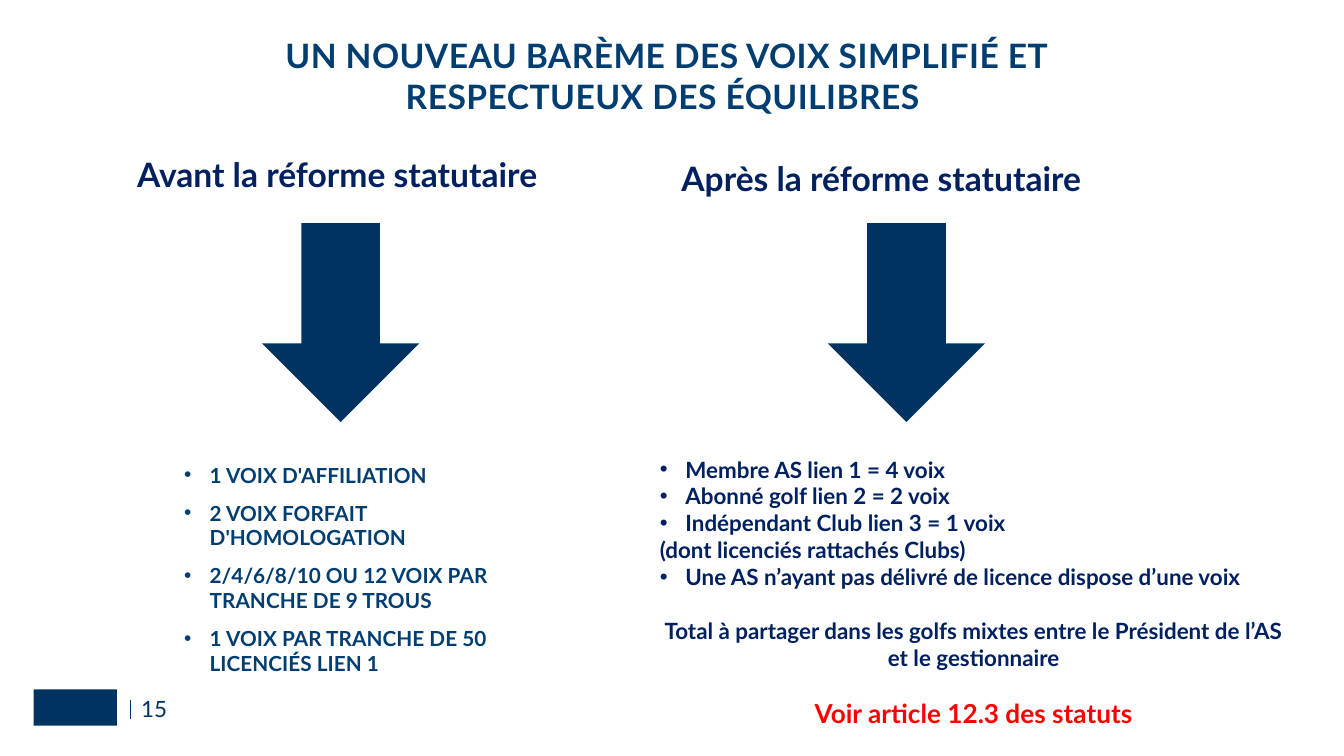
from lxml import etree
from pptx import Presentation
from pptx.dml.color import RGBColor
from pptx.enum import shapes, text
from pptx.oxml import ns
from pptx import util as u

WIDTH = 10
HEIGHT = WIDTH * 9 / 16
COLUMN, ROW = WIDTH / 100, HEIGHT / 100  # grid of 100 columns by 100 rows
COLORS = {"title": "003D70", "navy": "003361", "rule": "033363",
          "ink": "002060", "alert": "FF0000"}
FONT = "Lato"
HANG = u.Inches(0.19)
COMPARISON_LAYOUT = 4
LEFT, CENTER = text.PP_ALIGN.LEFT, text.PP_ALIGN.CENTER

BEFORE = ["1 VOIX D'AFFILIATION", "2 VOIX FORFAIT D'HOMOLOGATION",
          "2/4/6/8/10 OU 12 VOIX PAR TRANCHE DE 9 TROUS",
          "1 VOIX PAR TRANCHE DE 50 LICENCIÉS LIEN 1"]
AFTER = [
    ("Membre AS lien 1 = 4 voix", {"bullet": True}),
    ("Abonné golf lien 2 = 2 voix", {"bullet": True}),
    ("Indépendant Club lien 3 = 1 voix", {"bullet": True}),
    ("(dont licenciés rattachés Clubs)", {}),
    ("Une AS n’ayant pas délivré de licence dispose d’une voix", {"bullet": True}),
    ("Total à partager dans les golfs mixtes entre le Président de l’AS "
     "et le gestionnaire", {"align": CENTER, "before": 14.4}),
    ("Voir article 12.3 des statuts",
     {"align": CENTER, "before": 14.4, "size": 14, "color": "alert"}),
]


def grid(column, row, columns, rows):
    return (u.Inches(column * COLUMN), u.Inches(row * ROW),
            u.Inches(columns * COLUMN), u.Inches(rows * ROW))


def set_frame(shape, cell, margins=(0.1, 0.05), anchor=text.MSO_ANCHOR.TOP):
    """Place a text holder on the grid and return its text frame."""
    shape.left, shape.top, shape.width, shape.height = grid(*cell)
    frame = shape.text_frame
    frame.auto_size = text.MSO_AUTO_SIZE.NONE
    frame.word_wrap = True
    frame.vertical_anchor = anchor
    frame.margin_left = frame.margin_right = u.Inches(margins[0])
    frame.margin_top = frame.margin_bottom = u.Inches(margins[1])
    return frame


def write(frame, words, size=12, color="ink", bold=True, align=LEFT,
          bullet=False, before=0, after=0, tracking=0):
    """Add one formatted paragraph, filling the empty first one if there is one."""
    first = not frame.text
    paragraph = frame.paragraphs[0] if first else frame.add_paragraph()
    properties = paragraph._p.get_or_add_pPr()
    properties.set("marL", str(HANG if bullet else 0))
    properties.set("indent", str(-HANG if bullet else 0))
    if bullet:
        etree.SubElement(properties, ns.qn("a:buFont")).set("typeface", "Arial")
        etree.SubElement(properties, ns.qn("a:buChar")).set("char", "•")
    else:
        etree.SubElement(properties, ns.qn("a:buNone"))
    paragraph.alignment = align
    paragraph.line_spacing = 1.0
    paragraph.space_before = u.Pt(0 if first else before)
    paragraph.space_after = u.Pt(after)
    run = paragraph.add_run()
    run.text = words
    run.font.name, run.font.size, run.font.bold = FONT, u.Pt(size), bold
    run.font.color.rgb = RGBColor.from_string(COLORS[color])
    if tracking:
        run.font._element.set("spc", str(round(tracking * 100)))


def add_solid(slide, preset, cell):
    solid = slide.shapes.add_shape(preset, *grid(*cell))
    solid.shadow.inherit = False
    solid.fill.solid()
    solid.fill.fore_color.rgb = RGBColor.from_string(COLORS["navy"])
    solid.line.fill.background()


def add_rule(slide, column, start_row, end_row):
    x = u.Inches(column * COLUMN)
    rule = slide.shapes.add_connector(
        shapes.MSO_CONNECTOR.STRAIGHT, x, u.Inches(start_row * ROW),
        x, u.Inches(end_row * ROW))
    rule.line.color.rgb = RGBColor.from_string(COLORS["rule"])
    rule.line.width = u.Pt(0.5)
    etree.SubElement(rule._element.spPr, ns.qn("a:effectLst"))


def main():
    deck = Presentation()
    deck.slide_width, deck.slide_height = u.Inches(WIDTH), u.Inches(HEIGHT)
    slide = deck.slides.add_slide(deck.slide_layouts[COMPARISON_LAYOUT])
    title, before_head, before_list, after_head, after_list = slide.placeholders

    # Footer: plain emblem, rule and page number
    add_solid(slide, shapes.MSO_SHAPE.RECTANGLE, (2.5, 91.2, 6.2, 4.8))
    add_rule(slide, 9.7, 95.11, 92.62)
    page_cell = (10.5, 91.91, 23.3, 3.56)
    page = slide.shapes.add_textbox(*grid(*page_cell))
    write(set_frame(page, page_cell, (0, 0), text.MSO_ANCHOR.MIDDLE),
          "15", color="navy", bold=False)

    # Title
    heading = set_frame(title, (6.6, 4.62, 86.1, 11.2), (0, 0))
    for line in ("UN NOUVEAU BARÈME DES VOIX SIMPLIFIÉ ET",
                 "RESPECTUEUX DES ÉQUILIBRES "):
        write(heading, line, size=18, color="title", align=CENTER,
              before=0.5, tracking=0.25)

    # Column headings and arrows
    for head, words, column, row, arrow_column in (
            (before_head, "Avant la réforme statutaire", 9.2, 19.5, 19.5),
            (after_head, "Après la réforme statutaire", 49.7, 20.04, 61.6)):
        write(set_frame(head, (column, row, 35.3, 7.11)), words, size=18)
        add_solid(slide, shapes.MSO_SHAPE.DOWN_ARROW,
                  (arrow_column, 29.51, 11.7, 26.31))

    # Voting scale before and after the reform
    scale = set_frame(before_list, (13.7, 61.16, 28.3, 25.07), (0, 0))
    for words in BEFORE:
        write(scale, words, size=11.1, color="title", bullet=True, before=3, after=4)
    scale = set_frame(after_list, (48.1, 59.38, 48.7, 38.22))
    for words, style in AFTER:
        write(scale, words, **style)

    deck.save("out.pptx")


if __name__ == "__main__":
    main()
